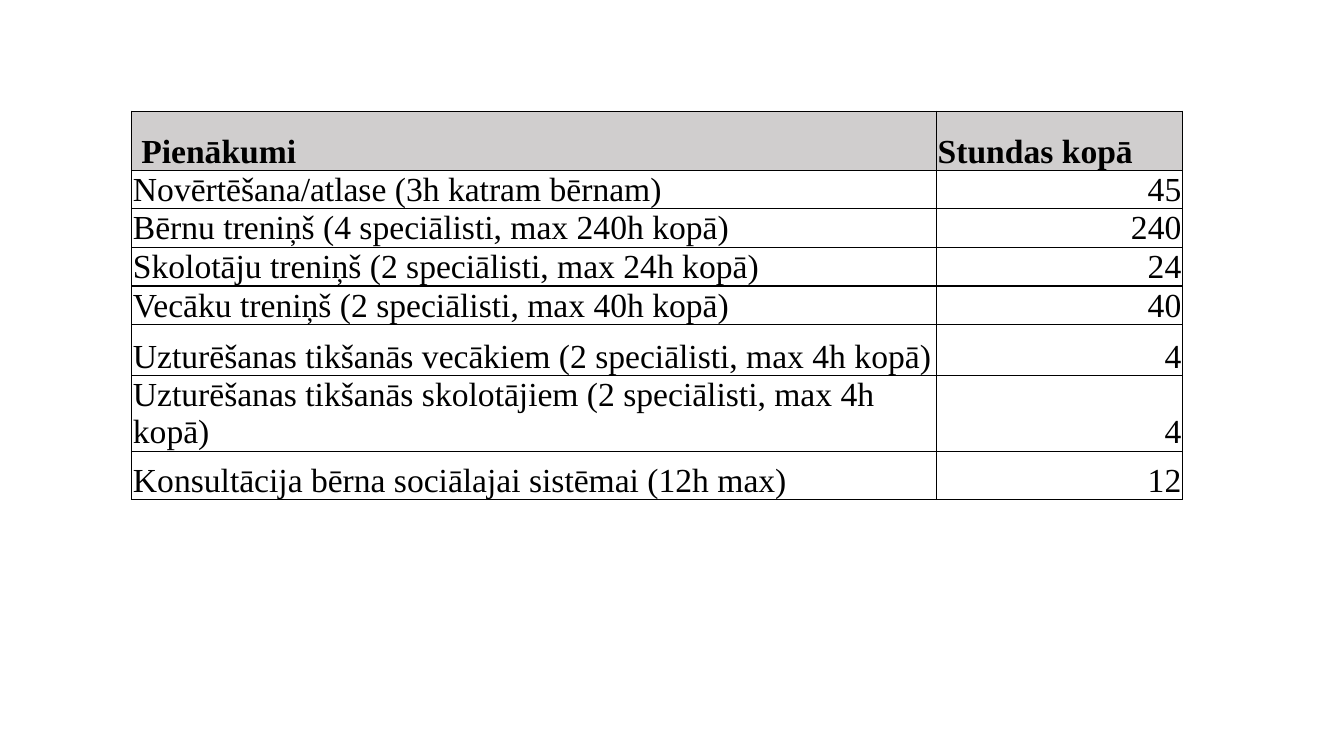
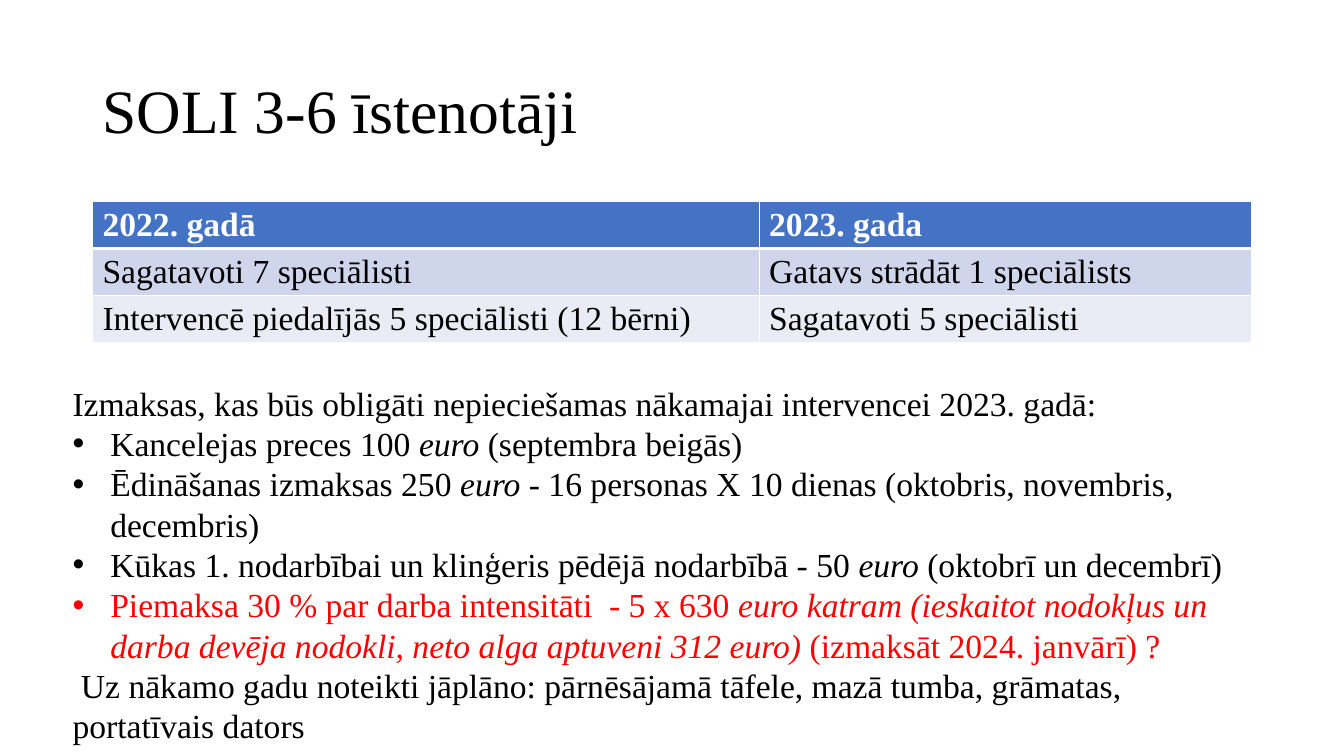
from lxml import etree
from pptx import Presentation
from pptx.dml.color import RGBColor
from pptx.enum.text import MSO_ANCHOR, MSO_AUTO_SIZE, PP_ALIGN
from pptx.oxml.ns import qn
from pptx.util import Cm, Pt

LEFT, RIGHT = PP_ALIGN.LEFT, PP_ALIGN.RIGHT
TOP, MIDDLE, BOTTOM = MSO_ANCHOR.TOP, MSO_ANCHOR.MIDDLE, MSO_ANCHOR.BOTTOM
NO_AUTOFIT = MSO_AUTO_SIZE.NONE

FONT = "Times New Roman"
BODY_SIZE, TITLE_SIZE = 24, 44
BLACK, WHITE, RED = "000000", "FFFFFF", "FF0000"
GREY, BLUE, PALE_BLUE, PALER_BLUE = "D0CECE", "4472C4", "CFD5EA", "E9EBF5"
TITLE_ONLY, BLANK = 5, 6
BULLET_INDENT = Cm(0.95)

HOURS = [
    (" Pienākumi", "Stundas kopā"),
    ("Novērtēšana/atlase (3h katram bērnam)", "45"),
    ("Bērnu treniņš (4 speciālisti, max 240h kopā)", "240"),
    ("Skolotāju treniņš (2 speciālisti, max 24h kopā)", "24"),
    ("Vecāku treniņš (2 speciālisti, max 40h kopā)", "40"),
    ("Uzturēšanas tikšanās vecākiem (2 speciālisti, max 4h kopā)", "4"),
    ("Uzturēšanas tikšanās skolotājiem (2 speciālisti, max 4h kopā)", "4"),
    ("Konsultācija bērna sociālajai sistēmai (12h max)", "12"),
]
HOURS_HEIGHTS = [1.49, 0.96, 0.97, 0.98, 0.98, 1.28, 1.88, 1.21]

SPECIALISTS = [
    ("2022. gadā", "2023. gada"),
    ("Sagatavoti 7 speciālisti", "Gatavs strādāt 1 speciālists"),
    ("Intervencē piedalījās 5 speciālisti (12 bērni)", "Sagatavoti 5 speciālisti"),
]

COSTS = [
    ("Izmaksas, kas būs obligāti nepieciešamas nākamajai intervencei 2023. gadā:", BLACK, False),
    ("Kancelejas preces 100 *euro* (septembra beigās)", BLACK, True),
    ("Ēdināšanas izmaksas 250 *euro* - 16 personas X 10 dienas "
     "(oktobris, novembris, decembris)", BLACK, True),
    ("Kūkas 1. nodarbībai un klinģeris pēdējā nodarbībā - 50 *euro* "
     "(oktobrī un decembrī)", BLACK, True),
    ("Piemaksa 30 % par darba intensitāti  - 5 x 630 *euro katram (ieskaitot nodokļus un "
     "darba devēja nodokli, neto alga aptuveni 312 euro) *(izmaksāt 2024. janvārī) ?", RED, True),
    (" Uz nākamo gadu noteikti jāplāno: pārnēsājamā tāfele, mazā tumba, grāmatas, "
     "portatīvais dators", BLACK, False),
]


def rgb(color):
    """Turn a hex string into a colour."""
    return RGBColor.from_string(color)


def write_text(paragraph, text, size=BODY_SIZE, color=BLACK, bold=False, align=LEFT, spacing=1.0):
    """Write formatted text, with the parts between asterisks in italics."""
    paragraph.alignment = align
    paragraph.line_spacing = spacing
    for index, part in enumerate(text.split("*")):
        run = paragraph.add_run()
        run.text = part
        run.font.name = FONT
        run.font.size = Pt(size)
        run.font.bold = bold
        run.font.italic = index % 2 == 1
        run.font.color.rgb = rgb(color)


def add_bullet(paragraph):
    """Give a paragraph a round bullet and a hanging indent."""
    properties = paragraph._p.get_or_add_pPr()
    properties.set("marL", str(BULLET_INDENT))
    properties.set("indent", str(-BULLET_INDENT))
    etree.SubElement(properties, qn("a:buFont"), typeface="Arial")
    etree.SubElement(properties, qn("a:buChar"), char="•")


def set_borders(cell, color, top, bottom):
    """Draw the four borders of a cell, with the widths of top and bottom given in points."""
    properties = cell._tc.get_or_add_tcPr()
    for side, width in (("L", 1), ("R", 1), ("T", top), ("B", bottom)):
        line = etree.SubElement(properties, qn(f"a:ln{side}"), w=str(Pt(width)))
        fill = etree.SubElement(line, qn("a:solidFill"))
        etree.SubElement(fill, qn("a:srgbClr"), val=color)


def add_table(slide, rows, left, top, widths, heights, fills, border, header_color=BLACK,
              header_rule=1, anchor=TOP, number_align=LEFT, margins=None):
    """Add a table with a bold header row and one fill per row."""
    frame = slide.shapes.add_table(len(rows), len(widths), Cm(left), Cm(top),
                                   Cm(sum(widths)), Cm(sum(heights)))
    table = frame.table
    for column, width in zip(table.columns, widths):
        column.width = Cm(width)
    for row_index, (texts, height, fill) in enumerate(zip(rows, heights, fills)):
        table.rows[row_index].height = Cm(height)
        header = row_index == 0
        for column_index, text in enumerate(texts):
            cell = table.cell(row_index, column_index)
            set_borders(cell, border, header_rule if row_index == 1 else 1,
                        header_rule if header else 1)
            cell.fill.solid()
            cell.fill.fore_color.rgb = rgb(fill)
            cell.vertical_anchor = anchor
            if margins is not None:
                cell.margin_left = cell.margin_right = cell.margin_top = Cm(margins)
                cell.margin_bottom = 0
            write_text(cell.text_frame.paragraphs[0], text, bold=header,
                       color=header_color if header else BLACK,
                       align=number_align if column_index and not header else LEFT)


def set_title(slide, text):
    """Place and format the title placeholder."""
    title = slide.shapes.title
    title.left, title.top, title.width, title.height = Cm(2.33), Cm(1.01), Cm(29.21), Cm(3.68)
    frame = title.text_frame
    frame.auto_size = NO_AUTOFIT
    frame.vertical_anchor = MIDDLE
    write_text(frame.paragraphs[0], text, size=TITLE_SIZE, spacing=0.9)


def add_text_box(slide, items, left, top, width, height):
    """Add a text box with a paragraph for each text, colour and bullet flag."""
    frame = slide.shapes.add_textbox(Cm(left), Cm(top), Cm(width), Cm(height)).text_frame
    frame.word_wrap = True
    for index, (text, color, bulleted) in enumerate(items):
        paragraph = frame.add_paragraph() if index else frame.paragraphs[0]
        write_text(paragraph, text, color=color)
        if bulleted:
            add_bullet(paragraph)


def add_hours_slide(presentation):
    """Build the slide with the hours for each duty."""
    slide = presentation.slides.add_slide(presentation.slide_layouts[BLANK])
    add_table(slide, HOURS, 3.32, 2.8, [20.28, 6.2], HOURS_HEIGHTS,
              [GREY] + [WHITE] * (len(HOURS) - 1), BLACK, anchor=BOTTOM,
              number_align=RIGHT, margins=0.03)


def add_specialists_slide(presentation):
    """Build the slide with the specialists and the costs."""
    slide = presentation.slides.add_slide(presentation.slide_layouts[TITLE_ONLY])
    set_title(slide, "SOLI 3-6 īstenotāji")
    add_table(slide, SPECIALISTS, 2.33, 5.07, [16.8, 12.41], [1.18] * len(SPECIALISTS),
              [BLUE, PALE_BLUE, PALER_BLUE], WHITE, header_color=WHITE, header_rule=3)
    add_text_box(slide, COSTS, 1.58, 9.52, 30.68, 9.5)


def main():
    """Build and save the presentation."""
    presentation = Presentation()
    presentation.slide_width, presentation.slide_height = Cm(33.87), Cm(19.05)
    add_hours_slide(presentation)
    add_specialists_slide(presentation)
    presentation.save("out.pptx")


if __name__ == "__main__":
    main()
